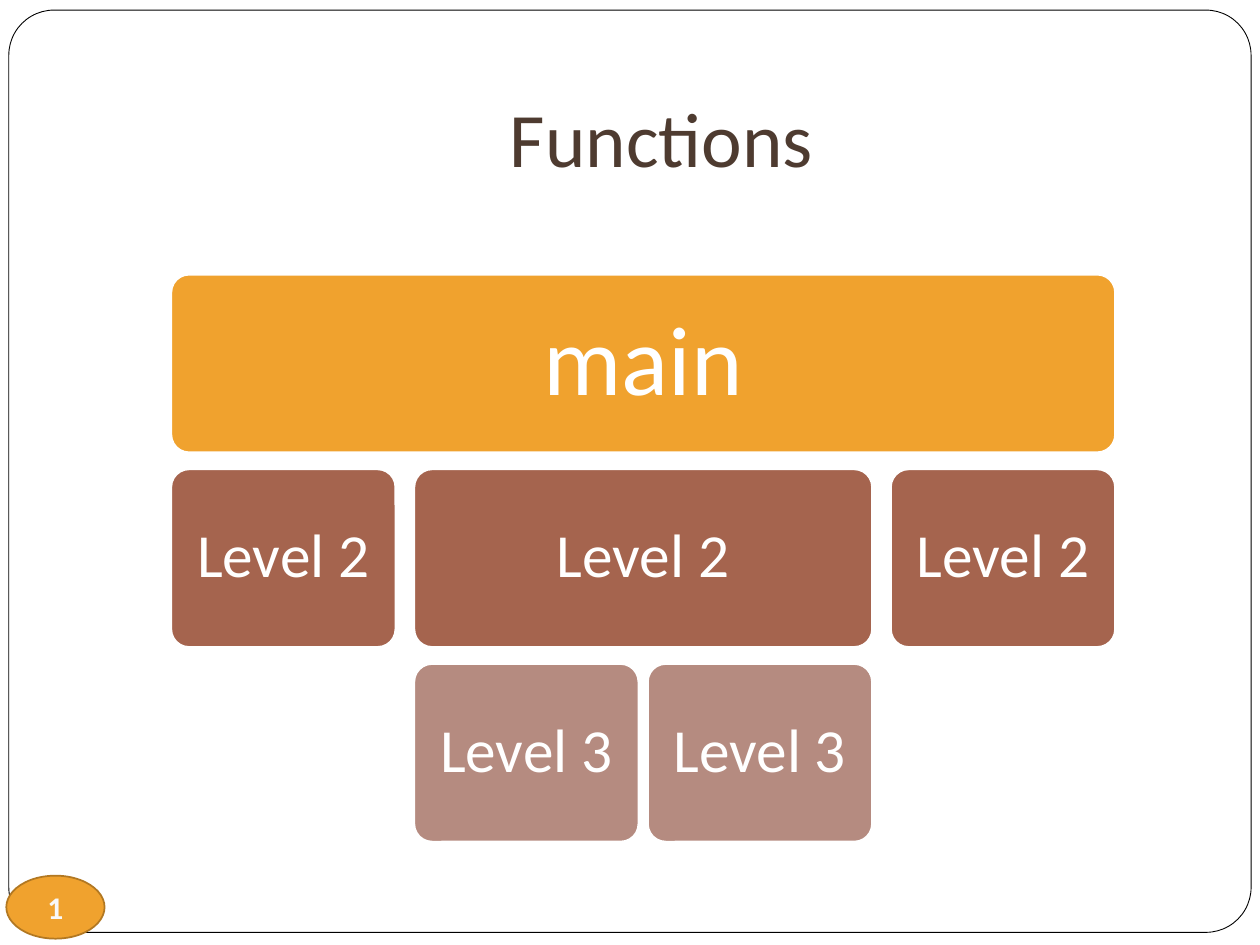
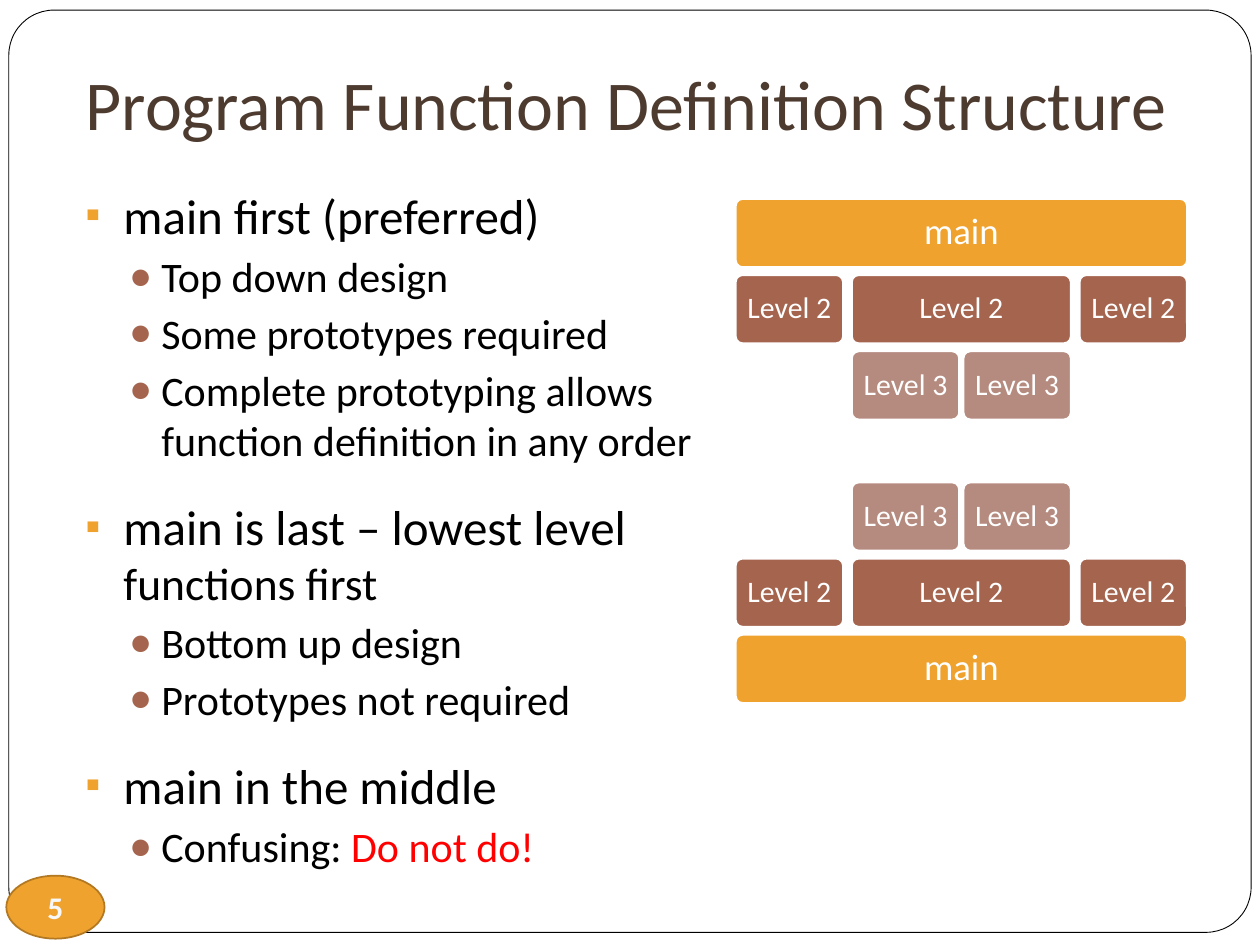
from lxml import etree
from pptx import Presentation
from pptx.dml.color import RGBColor
from pptx.enum.shapes import MSO_SHAPE
from pptx.enum.text import MSO_ANCHOR, MSO_AUTO_SIZE, PP_ALIGN
from pptx.oxml.ns import qn
from pptx.util import Inches, Pt

ROUNDED, OVAL = MSO_SHAPE.ROUNDED_RECTANGLE, MSO_SHAPE.OVAL
LEFT, CENTER = PP_ALIGN.LEFT, PP_ALIGN.CENTER
TOP, MIDDLE, BOTTOM = MSO_ANCHOR.TOP, MSO_ANCHOR.MIDDLE, MSO_ANCHOR.BOTTOM
NO_AUTOFIT = MSO_AUTO_SIZE.NONE
TITLE_AND_BODY, TITLE_ONLY = 1, 5

FONT = "Calibri"
BLACK, WHITE, RED = "000000", "FFFFFF", "FF0000"
ORANGE, DARK_ORANGE = "F0A22E", "B27822"
RUST, PALE_RUST, BROWN = "A5644E", "B58B80", "4E3B30"
NUMBER_WHITE = "F8F8F8"

# Name, row, left and width (as shares of the diagram's width), fill
FUNCTION_BOXES = [
    ("main", 0, 0, 1, ORANGE),
    ("Level 2", 1, 0, 0.2375, RUST),
    ("Level 2", 1, 0.2575, 0.485, RUST),
    ("Level 3", 2, 0.2575, 0.2375, PALE_RUST),
    ("Level 3", 2, 0.505, 0.2375, PALE_RUST),
    ("Level 2", 1, 0.7625, 0.2375, RUST),
]
LAST_ROW = 2
ROW_GAP = 0.018

# Indent, hanging indent, bullet, bullet colour, text size, space before
BULLET_LEVELS = [
    (0.3, 0.3, "▪", ORANGE, 28, 5.8),
    (0.6, 0.25, "●", RUST, 24, 3.7),
]
SECTION_SPACE = 18

# Level and runs; a run may be a text or a text with its own format
ORDER_POINTS = [
    (0, ["main first (preferred)"]),
    (1, ["Top down design"]),
    (1, ["Some prototypes required"]),
    (1, ["Complete prototyping allows function definition in any order"]),
    (0, ["main is last – lowest level ", ("functions first", {"size": 26})]),
    (1, ["Bottom up design"]),
    (1, ["Prototypes not required"]),
    (0, ["main in the middle"]),
    (1, ["Confusing: ", ("Do not do!", {"color": RED})]),
]


def rgb(color):
    return RGBColor.from_string(color)


def place(shape, left, top, width, height):
    shape.left, shape.top = Inches(left), Inches(top)
    shape.width, shape.height = Inches(width), Inches(height)


def set_frame(frame, anchor, left=0, top=0, right=0, bottom=0):
    frame.word_wrap = True
    frame.auto_size = NO_AUTOFIT
    frame.vertical_anchor = anchor
    frame.margin_left, frame.margin_top = Inches(left), Inches(top)
    frame.margin_right, frame.margin_bottom = Inches(right), Inches(bottom)


def write(paragraph, text, size=24, color=BLACK, bold=False, align=LEFT, spacing=1):
    """Add one formatted run to the paragraph."""
    paragraph.alignment = align
    paragraph.line_spacing = spacing
    run = paragraph.add_run()
    run.text = text
    run.font.name, run.font.size, run.font.bold = FONT, Pt(size), bold
    run.font.color.rgb = rgb(color)


def set_bullet(paragraph, indent, hanging, character, color):
    properties = paragraph._p.get_or_add_pPr()
    properties.set("marL", str(Inches(indent)))
    properties.set("indent", str(-Inches(hanging)))
    bullet_color = etree.SubElement(properties, qn("a:buClr"))
    etree.SubElement(bullet_color, qn("a:srgbClr"), val=color)
    etree.SubElement(properties, qn("a:buSzPct"), val="85000")
    etree.SubElement(properties, qn("a:buFont"), typeface=FONT)
    etree.SubElement(properties, qn("a:buChar"), char=character)


class Deck:
    """Holds the presentation, its style and the current slide."""

    def __init__(self):
        self.presentation = Presentation()
        self.presentation.slide_width = Inches(10)
        self.presentation.slide_height = Inches(7.5)
        self.slide = None

    def add_slide(self, layout, number):
        self.slide = self.presentation.slides.add_slide(
            self.presentation.slide_layouts[layout])
        border = self.shape(ROUNDED, (0.07, 0.08, 9.86, 7.32), WHITE, BLACK, 0.5)
        border.adjustments[0] = 0.049
        badge = self.shape(OVAL, (0.05, 6.95, 0.78, 0.5), ORANGE, DARK_ORANGE)
        set_frame(badge.text_frame, MIDDLE)
        write(badge.text_frame.paragraphs[0], str(number), size=18,
              color=NUMBER_WHITE, bold=True, align=CENTER)
        # Border and badge lie behind the placeholders
        for index, shape in enumerate((border, badge), start=2):
            self.slide.shapes._spTree.insert(index, shape._element)

    def shape(self, kind, box, fill, line, line_width=1):
        shape = self.slide.shapes.add_shape(kind, *map(Inches, box))
        shape.shadow.inherit = False
        shape.fill.solid()
        shape.fill.fore_color.rgb = rgb(fill)
        shape.line.color.rgb = rgb(line)
        shape.line.width = Pt(line_width)
        return shape

    def title(self, text, box, size, align):
        title = self.slide.shapes.title
        place(title, *box)
        set_frame(title.text_frame, BOTTOM, 0.1, 0.05, 0.1, 0.1)
        write(title.text_frame.paragraphs[0], text, size=size, color=BROWN, align=align)

    def bullets(self, points, box):
        body = self.slide.placeholders[1]
        place(body, *box)
        frame = body.text_frame
        set_frame(frame, TOP, 0.1, 0.05, 0.1, 0.05)
        for index, (level, runs) in enumerate(points):
            paragraph = frame.add_paragraph() if index else frame.paragraphs[0]
            indent, hanging, character, color, size, space = BULLET_LEVELS[level]
            paragraph.level = level
            new_section = index and level == 0
            paragraph.space_before = Pt(SECTION_SPACE if new_section else space)
            for run in runs:
                text, changes = (run, {}) if isinstance(run, str) else run
                write(paragraph, text, **{"size": size, **changes})
            set_bullet(paragraph, indent, hanging, character, color)

    def function_diagram(self, left, top, width, row_height, main_size, level_size,
                         main_last=False):
        """Draw the call levels, with main in the first or the last row."""
        row_step = row_height + ROW_GAP * width
        for name, row, offset, share, fill in FUNCTION_BOXES:
            position = LAST_ROW - row if main_last else row
            box = (left + offset * width, top + position * row_step,
                   share * width, row_height)
            shape = self.shape(ROUNDED, box, fill, WHITE)
            shape.adjustments[0] = 0.1
            set_frame(shape.text_frame, MIDDLE)
            write(shape.text_frame.paragraphs[0], name, color=WHITE, align=CENTER,
                  size=main_size if name == "main" else level_size, spacing=0.9)


def main():
    deck = Deck()

    deck.add_slide(TITLE_ONLY, 1)
    deck.title("Functions", (1, 0.3, 8.5, 1.25), 44, CENTER)
    deck.function_diagram(1.36, 2.18, 7.49, 1.41, 56, 35)

    deck.add_slide(TITLE_AND_BODY, 5)
    deck.title("Program Function Definition Structure", (0.58, 0.3, 8.92, 0.95), 40, LEFT)
    deck.bullets(ORDER_POINTS, (0.58, 1.42, 5.17, 5.83))
    small_diagram = {"left": 5.84, "width": 3.58, "row_height": 0.54,
                     "main_size": 21, "level_size": 17}
    deck.function_diagram(top=1.58, **small_diagram)
    deck.function_diagram(top=3.83, main_last=True, **small_diagram)

    deck.presentation.save("out.pptx")


if __name__ == "__main__":
    main()
